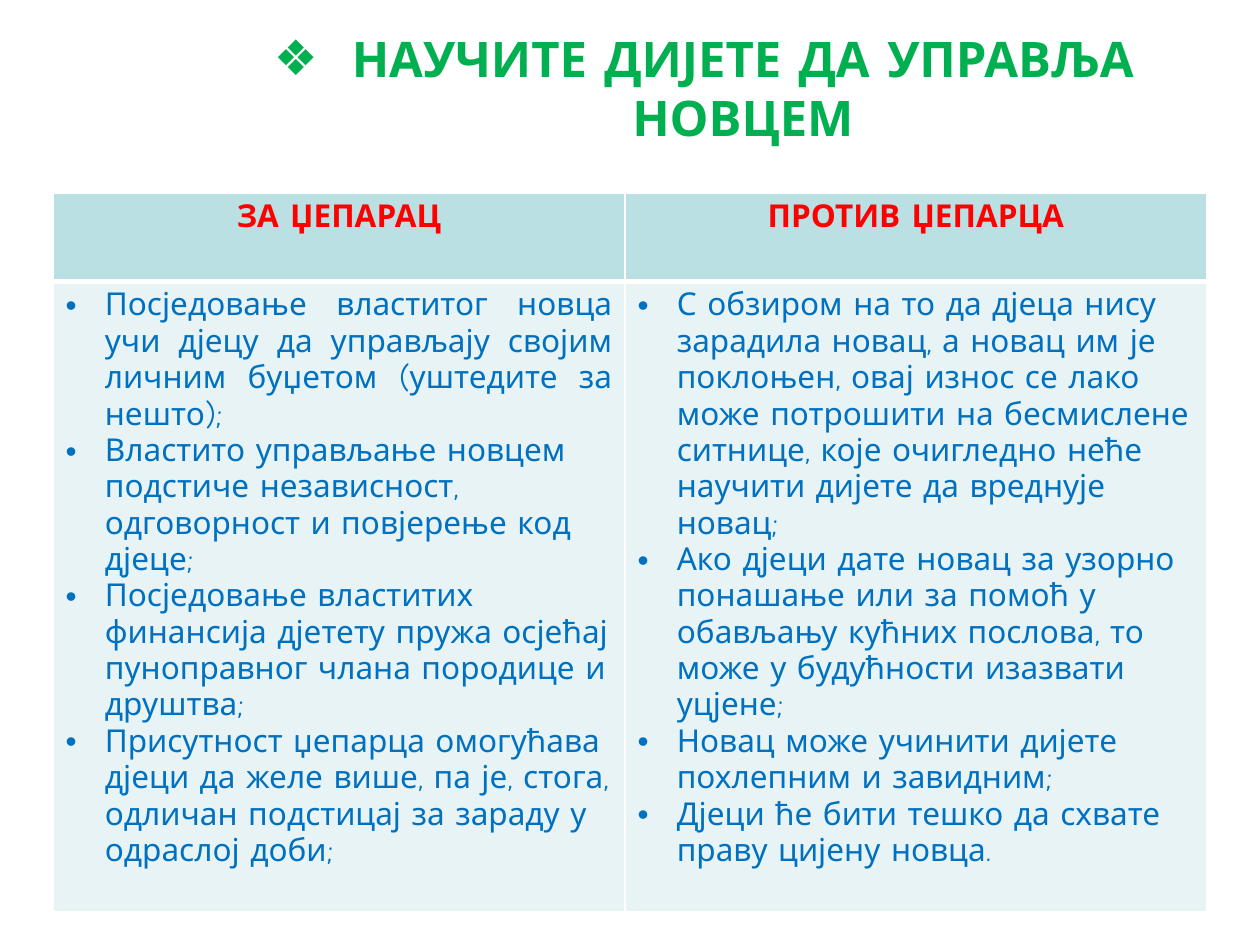
"""Builds a slide weighing the arguments for and against pocket money."""
from dataclasses import dataclass

from lxml import etree
from pptx import Presentation
from pptx.dml.color import RGBColor
from pptx.enum.text import MSO_ANCHOR, MSO_AUTO_SIZE, PP_ALIGN
from pptx.oxml.ns import qn
from pptx.util import Cm, Pt

CENTER, LEFT, JUSTIFY = PP_ALIGN.CENTER, PP_ALIGN.LEFT, PP_ALIGN.JUSTIFY
MIDDLE, NO_FIT = MSO_ANCHOR.MIDDLE, MSO_AUTO_SIZE.NONE

TITLE = "НАУЧИТЕ ДИЈЕТЕ ДА УПРАВЉА НОВЦЕМ"
ARGUMENTS = {
    "ЗА ЏЕПАРАЦ": [
        ("Посједовање властитог новца учи дјецу да управљају својим личним "
         "буџетом (уштедите за нешто);", JUSTIFY),
        ("Властито управљање новцем подстиче независност, одговорност и "
         "повјерење код дјеце;", LEFT),
        ("Посједовање властитих финансија дјетету пружа осјећај пуноправног "
         "члана породице и друштва;", LEFT),
        ("Присутност џепарца омогућава дјеци да желе више, па је, стога, "
         "одличан подстицај за зараду у одраслој доби;", LEFT),
    ],
    "ПРОТИВ ЏЕПАРЦА": [
        ("С обзиром на то да дјеца нису зарадила новац, а новац им је поклоњен, "
         "овај износ се лако може потрошити на бесмислене ситнице, које "
         "очигледно неће научити дијете да вреднује новац;", LEFT),
        ("Ако дјеци дате новац за узорно понашање или за помоћ у обављању "
         "кућних послова, то може у будућности изазвати уцјене;", LEFT),
        ("Новац може учинити дијете похлепним и завидним;", LEFT),
        ("Дјеци ће бити тешко да схвате праву цијену новца.", LEFT),
    ],
}
COLUMN_WIDTHS = (Cm(11.53), Cm(11.73))
ROW_HEIGHTS = (Cm(1.78), Cm(12.7))


@dataclass(frozen=True)
class Theme:
    font: str = "Comic Neue"
    title: str = "00B050"
    heading: str = "FF0000"
    body: str = "0070C0"
    heading_fill: str = "BBE0E3"
    body_fill: str = "E7F3F4"
    border: str = "FFFFFF"
    title_size: int = 28
    table_size: int = 18


THEME = Theme()


def write(paragraph, text, *, color, size=THEME.table_size, bold=False,
          align=LEFT, bullet=None, indent=0):
    paragraph.alignment = align
    if bullet:
        properties = paragraph._p.get_or_add_pPr()
        properties.set("marL", str(indent))
        properties.set("indent", str(-indent))
        etree.SubElement(properties, qn("a:buFont"), typeface="Arial")
        etree.SubElement(properties, qn("a:buChar"), char=bullet)
    run = paragraph.add_run()
    run.text = text
    run.font.name = THEME.font
    run.font.size = Pt(size)
    run.font.bold = bold
    run.font.color.rgb = RGBColor.from_string(color)


def style_cell(cell, fill, top=1, bottom=1):
    properties = cell._tc.get_or_add_tcPr()
    for side, width in (("L", 1), ("R", 1), ("T", top), ("B", bottom)):
        line = etree.SubElement(properties, qn(f"a:ln{side}"), w=str(Pt(width)))
        solid = etree.SubElement(line, qn("a:solidFill"))
        etree.SubElement(solid, qn("a:srgbClr"), val=THEME.border)
    cell.fill.solid()
    cell.fill.fore_color.rgb = RGBColor.from_string(fill)


def add_title(slide):
    title = slide.shapes.title
    title.left, title.top = Cm(3.61), Cm(0.28)
    title.width, title.height = Cm(21.16), Cm(2.97)
    frame = title.text_frame
    frame.word_wrap = True
    frame.auto_size = NO_FIT
    frame.vertical_anchor = MIDDLE
    write(frame.paragraphs[0], TITLE, color=THEME.title, size=THEME.title_size,
          bold=True, align=CENTER, bullet="❖", indent=Cm(1.57))


def add_arguments(slide):
    table = slide.shapes.add_table(
        len(ROW_HEIGHTS), len(ARGUMENTS), Cm(1.07), Cm(3.89),
        sum(COLUMN_WIDTHS), sum(ROW_HEIGHTS)).table
    for row, height in zip(table.rows, ROW_HEIGHTS):
        row.height = height
    for index, (heading, points) in enumerate(ARGUMENTS.items()):
        table.columns[index].width = COLUMN_WIDTHS[index]
        heading_cell, points_cell = table.cell(0, index), table.cell(1, index)
        style_cell(heading_cell, THEME.heading_fill, bottom=3)
        style_cell(points_cell, THEME.body_fill, top=3)
        write(heading_cell.text_frame.paragraphs[0], heading,
              color=THEME.heading, bold=True, align=CENTER)
        frame = points_cell.text_frame
        for number, (point, align) in enumerate(points):
            paragraph = frame.add_paragraph() if number else frame.paragraphs[0]
            write(paragraph, point, color=THEME.body, align=align,
                  bullet="•", indent=Cm(0.79))


def main():
    presentation = Presentation()
    presentation.slide_width, presentation.slide_height = Cm(25.4), Cm(19.05)
    slide = presentation.slides.add_slide(
        presentation.slide_layouts.get_by_name("Title Only"))
    add_title(slide)
    add_arguments(slide)
    presentation.save("out.pptx")


if __name__ == "__main__":
    main()
